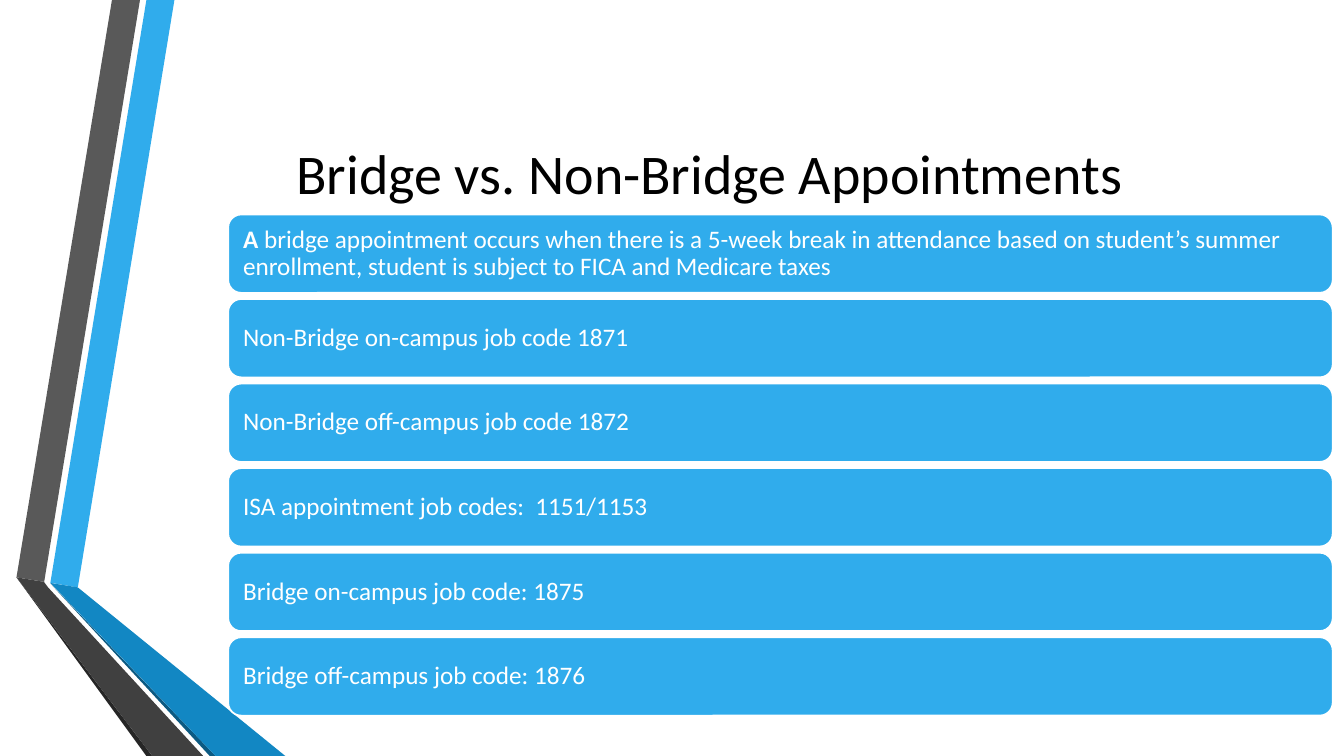
from pptx import Presentation
from pptx.dml.color import RGBColor as RGB
from pptx.enum.shapes import MSO_SHAPE as Kind
from pptx.enum.text import MSO_ANCHOR as Anchor, PP_ALIGN as Align
from pptx.util import Pt

HUES = {
    "sky": "30ACEC", "blue": "1287C3", "navy": "0C5A82",
    "gray": "595959", "dark": "404040", "coal": "262626",
    "white": "FFFFFF", "black": "000000",
}


def paint(shape, hue):
    shape.shadow.inherit = False
    shape.fill.solid()
    shape.fill.fore_color.rgb = RGB.from_string(HUES[hue])


def add_run(para, text, size, hue, bold=False):
    run = para.add_run()
    run.text = text
    font = run.font
    font.name, font.size, font.bold = "Calibri", Pt(size), bold
    font.color.rgb = RGB.from_string(HUES[hue])


deck = Presentation()
deck.slide_width, deck.slide_height = Pt(960), Pt(540)
slide = deck.slides.add_slide(deck.slide_layouts[6])
shapes = slide.shapes

# Folded ribbons on the left
ribbons = [
    ("sky", [(36, 416.2), (55.6, 419.6), (124.6, 0), (104.6, 0)]),
    ("gray", [(100, 0), (80, 0), (11.8, 412.4), (31.6, 415.6)]),
    ("coal", [(11.8, 412.4), (104.6, 540), (108.8, 540)]),
    ("navy", [(36, 416.8), (149.8, 540), (154, 540)]),
    ("blue", [(36, 416.4), (154, 540), (203.8, 540), (55.6, 419.6)]),
    ("dark", [(145.2, 540), (34.4, 419.6), (31.4, 415.6),
              (11.8, 412.4), (108.8, 540)]),
]
for hue, spots in ribbons:
    first, *rest = [(Pt(x), Pt(y)) for x, y in spots]
    pen = shapes.build_freeform(*first)
    pen.add_line_segments(rest, close=True)
    ribbon = pen.convert_to_shape()
    paint(ribbon, hue)
    ribbon.line.fill.background()

# Title
title = shapes.add_textbox(Pt(116.8), Pt(54), Pt(789), Pt(138))
frame = title.text_frame
frame.word_wrap = True
frame.vertical_anchor = Anchor.MIDDLE
para = frame.paragraphs[0]
para.alignment = Align.CENTER
add_run(para, "Bridge vs. Non-Bridge Appointments ", 40, "black")

# Stack of bars: bold lead, then plain text
bars = [
    ("A ", "bridge appointment occurs when there is a 5-week break in "
           "attendance based on student’s summer enrollment, student "
           "is subject to FICA and Medicare taxes"),
    ("", "Non-Bridge on-campus job code 1871"),
    ("", "Non-Bridge off-campus job code 1872"),
    ("", "ISA appointment job codes:  1151/1153"),
    ("", "Bridge on-campus job code: 1875"),
    ("", "Bridge off-campus job code: 1876"),
]
top, step = 153.2, 60.4
for i, (lead, text) in enumerate(bars):
    bar = shapes.add_shape(Kind.ROUNDED_RECTANGLE, Pt(163), Pt(top + i * step),
                           Pt(789), Pt(56))
    paint(bar, "sky")
    bar.line.color.rgb = RGB.from_string(HUES["white"])
    bar.line.width = Pt(1.25)
    frame = bar.text_frame
    frame.word_wrap = True
    frame.vertical_anchor = Anchor.MIDDLE
    frame.margin_left = frame.margin_right = Pt(8)
    frame.margin_top = frame.margin_bottom = Pt(5)
    para = frame.paragraphs[0]
    para.alignment = Align.LEFT
    para.line_spacing = 0.9
    if lead:
        add_run(para, lead, 18, "white", True)
    add_run(para, text, 18, "white")

deck.save("out.pptx")
